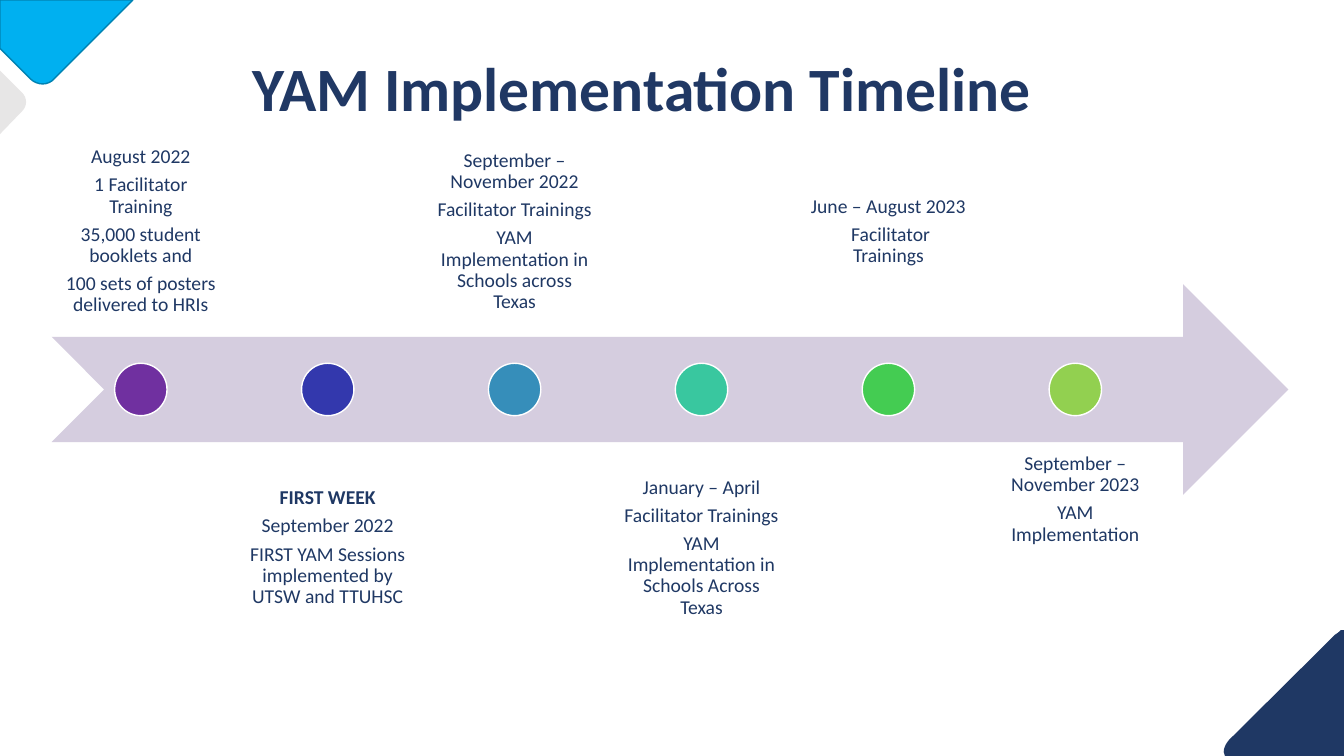
from pptx import Presentation
from pptx.dml.color import RGBColor
from pptx.enum.shapes import MSO_SHAPE
from pptx.enum.text import MSO_ANCHOR, PP_ALIGN
from pptx.util import Cm, Pt

COLORS = {
    "navy": "1F3864", "title": "203864", "blue": "00B0F0", "blue_line": "0082B2",
    "grey": "E7E6E6", "arrow": "D5CDDF", "white": "FFFFFF",
    "purple": "7030A0", "indigo": "3338AD", "steel": "368EBA",
    "teal": "39C79F", "green": "44CC52", "lime": "92D050",
}
FONT = "Calibri"
CURVE_STEPS = 8
PITCH, LABEL_W, LABEL_H = 4.71, 4.5, 5.31
LABEL_RISE, LABEL_DROP = 3.98, 3.99
DOT = 1.32

CORNERS = [
    ((30.84, 15.88), "navy", None,
     [(3.03, 0), (3.03, 3.17), (0.03, 3.17), (0, 3.07),
      (0, 2.97, 0.05, 2.87, 0.13, 2.77), (2.82, 0.1),
      (2.87, 0.08, 2.92, 0.03, 2.95, 0)]),
    ((0, 0), "blue", "blue_line",
     [(0, 0), (3.35, 0), (1.37, 1.98),
      (1.22, 2.16, 0.94, 2.16, 0.76, 1.98), (0, 1.22)]),
    ((0, 1.78), "grey", None,
     [(0, 0), (0.56, 0.56), (0.69, 0.69, 0.69, 0.89, 0.56, 1.02), (0, 1.6)]),
]

MILESTONES = [
    ("purple", ["August 2022", "1 Facilitator Training", "35,000 student booklets and",
                "100 sets of posters delivered to HRIs"]),
    ("indigo", ["FIRST WEEK", "September 2022",
                "FIRST YAM Sessions implemented by UTSW and TTUHSC"]),
    ("steel", ["September – November 2022", "Facilitator Trainings",
               "YAM Implementation in Schools across Texas"]),
    ("teal", ["January – April", "Facilitator Trainings",
              "YAM Implementation in Schools Across Texas"]),
    ("green", ["June – August 2023", " Facilitator Trainings"]),
    ("lime", ["September – November 2023", "YAM Implementation"]),
]


def rgb(name):
    return RGBColor.from_string(COLORS[name])


def paint(sp, fill, line=None):
    sp.shadow.inherit = False
    sp.fill.solid()
    sp.fill.fore_color.rgb = rgb(fill)
    if line:
        sp.line.color.rgb = rgb(line)
        sp.line.width = Pt(1)
    else:
        sp.line.fill.background()


def outline(segments):
    points = []
    for seg in segments:
        if len(seg) == 2:
            points.append(seg)
            continue
        controls = [points[-1], seg[:2], seg[2:4], seg[4:]]
        for i in range(1, CURVE_STEPS + 1):
            t = i / CURVE_STEPS
            weights = ((1 - t) ** 3, 3 * t * (1 - t) ** 2, 3 * t * t * (1 - t), t ** 3)
            points.append(tuple(sum(w * c[axis] for w, c in zip(weights, controls))
                                for axis in (0, 1)))
    return [(Cm(x), Cm(y)) for x, y in points]


def add_corner(s, left, top, fill, line, segments):
    points = [(Cm(left) + x, Cm(top) + y) for x, y in outline(segments)]
    builder = s.shapes.build_freeform(*points[0])
    builder.add_line_segments(points[1:], close=True)
    paint(builder.convert_to_shape(), fill, line)


def add_text(s, box, lines, size, color, anchor, margin, after=0, bold=()):
    tf = s.shapes.add_textbox(*map(Cm, box)).text_frame
    tf.word_wrap = True
    tf.vertical_anchor = anchor
    tf.margin_left = tf.margin_right = tf.margin_top = tf.margin_bottom = Cm(margin)
    tf.text = "\n".join(lines)
    for p in tf.paragraphs:
        p.alignment = PP_ALIGN.CENTER
        p.line_spacing = 0.9
        p.space_after = Pt(after)
        for r in p.runs:
            r.font.name = FONT
            r.font.size = Pt(size)
            r.font.bold = p.text in bold
            r.font.color.rgb = rgb(color)


def add_title(s, left, top, width, height):
    title = "YAM Implementation Timeline"
    add_text(s, (left, top, width, height), [title], 44, "title",
             MSO_ANCHOR.MIDDLE, 0.2, bold=(title,))


def add_timeline(s, left, top, width, height):
    arrow = s.shapes.add_shape(MSO_SHAPE.NOTCHED_RIGHT_ARROW,
                               Cm(left), Cm(top), Cm(width), Cm(height))
    paint(arrow, "arrow")
    for i, (color, lines) in enumerate(MILESTONES):
        x = left + i * PITCH
        y = top + LABEL_DROP if i % 2 else top - LABEL_RISE
        last = i == len(MILESTONES) - 1
        anchor = MSO_ANCHOR.TOP if last else MSO_ANCHOR.MIDDLE
        add_text(s, (x, y, LABEL_W, LABEL_H), lines, 14, "navy", anchor, 0.28,
                 after=5, bold=("FIRST WEEK",))
        dot = s.shapes.add_shape(MSO_SHAPE.OVAL, Cm(x + (LABEL_W - DOT) / 2),
                                 Cm(top + (height - DOT) / 2), Cm(DOT), Cm(DOT))
        paint(dot, color, "white")


def main():
    prs = Presentation()
    prs.slide_width, prs.slide_height = Cm(33.87), Cm(19.05)
    s = prs.slides.add_slide(prs.slide_layouts[6])
    for (left, top), fill, line, segments in CORNERS:
        add_corner(s, left, top, fill, line, segments)
    add_title(s, 3.56, 1.02, 25.25, 2.59)
    add_timeline(s, 1.3, 7.16, 31.17, 5.31)
    prs.save("out.pptx")


if __name__ == "__main__":
    main()
